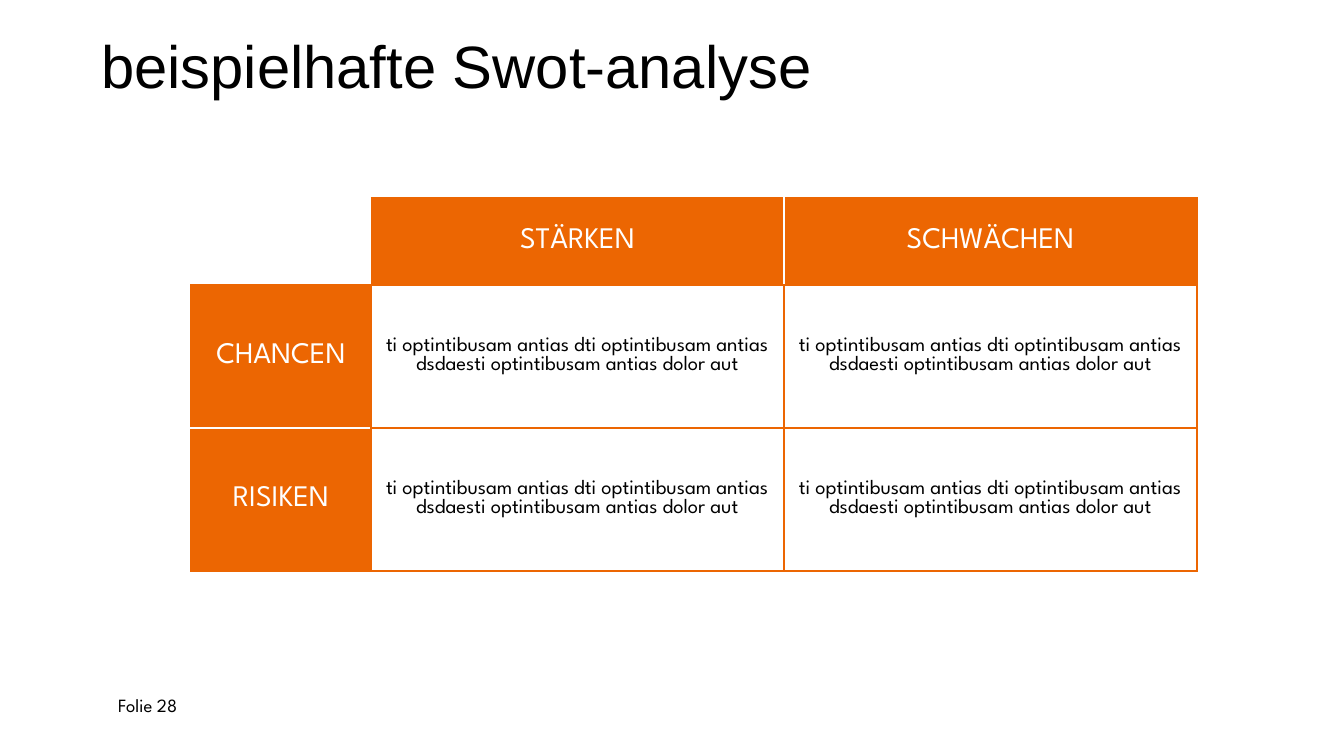
from dataclasses import dataclass
from typing import Optional

from lxml.etree import SubElement
from pptx import Presentation
from pptx.dml.color import RGBColor
from pptx.enum.text import MSO_ANCHOR as Anchor, MSO_AUTO_SIZE as AutoSize, PP_ALIGN as Align
from pptx.oxml.ns import qn
from pptx.util import Emu, Pt

EMU_PER_PX = 914400 / 134.4
SLIDE_WIDTH, SLIDE_HEIGHT = 1344, 756

ORANGE = RGBColor(0xEC, 0x66, 0x02)
WHITE = RGBColor(0xFF, 0xFF, 0xFF)
BLACK = RGBColor(0x00, 0x00, 0x00)
TITLE_FONT = "Arial"
BODY_FONT = "League Spartan"
PLAIN_TABLE_STYLE = "{2D5ABB26-0587-4C30-8999-92F81FD0307C}"

COLUMN_WIDTHS = [180, 413, 413]
ROW_HEIGHTS = [87, 143, 143]
SAMPLE = ("ti optintibusam antias dti optintibusam antias "
          "dsdaesti optintibusam antias dolor aut")
SWOT = [
    ["", "STÄRKEN", "SCHWÄCHEN"],
    ["CHANCEN", SAMPLE, SAMPLE],
    ["RISIKEN", SAMPLE, SAMPLE],
]


@dataclass(frozen=True)
class TextStyle:
    font: str
    size: int
    color: RGBColor


@dataclass(frozen=True)
class Label:
    text: str
    left: int
    top: int
    width: int
    height: int
    style: TextStyle
    inset: Optional[int] = None
    line_spacing: Optional[float] = None
    auto_size: AutoSize = AutoSize.NONE


HEADER_STYLE = TextStyle(BODY_FONT, 16, WHITE)
CONTENT_STYLE = TextStyle(BODY_FONT, 11, BLACK)
LABELS = [
    Label("beispielhafte Swot-analyse", 101, 40, 1185, 60,
          TextStyle(TITLE_FONT, 32, BLACK), inset=0, line_spacing=0.85),
    Label("Folie 28", 105, 687, 112, 36, TextStyle(BODY_FONT, 10, BLACK),
          auto_size=AutoSize.SHAPE_TO_FIT_TEXT),
]


def px(length: int) -> Emu:
    return Emu(round(length * EMU_PER_PX))


def add_run(paragraph, text: str, style: TextStyle) -> None:
    run = paragraph.add_run()
    run.text = text
    run.font.name = style.font
    run.font.size = Pt(style.size)
    run.font.color.rgb = style.color


def add_label(slide, label: Label) -> None:
    frame = slide.shapes.add_textbox(
        px(label.left), px(label.top), px(label.width), px(label.height)).text_frame
    frame.word_wrap = True
    frame.auto_size = label.auto_size
    if label.inset is not None:
        frame.margin_left = frame.margin_right = px(label.inset)
        frame.margin_top = frame.margin_bottom = px(label.inset)
    paragraph = frame.paragraphs[0]
    if label.line_spacing is not None:
        paragraph.line_spacing = label.line_spacing
    add_run(paragraph, label.text, label.style)


def is_header(row: int, column: int) -> bool:
    return (row == 0) != (column == 0)


def edge_color(row: int, column: int, side: str) -> Optional[RGBColor]:
    """White between two headers, none around the empty corner, else orange."""
    if (row, column) == (0, 0):
        return ORANGE if side == "B" else None
    if (row, column, side) == (0, 1, "L"):
        return None
    row_step, column_step = {"L": (0, -1), "R": (0, 1), "T": (-1, 0), "B": (1, 0)}[side]
    next_row, next_column = row + row_step, column + column_step
    inside = 0 <= next_row < len(ROW_HEIGHTS) and 0 <= next_column < len(COLUMN_WIDTHS)
    if inside and is_header(row, column) and is_header(next_row, next_column):
        return WHITE
    return ORANGE


def set_border(cell, side: str, color: Optional[RGBColor]) -> None:
    line = SubElement(cell._tc.get_or_add_tcPr(), qn(f"a:ln{side}"), w=str(int(Pt(1))))
    if color is None:
        SubElement(line, qn("a:noFill"))
    else:
        SubElement(SubElement(line, qn("a:solidFill")), qn("a:srgbClr"), val=str(color))
        SubElement(line, qn("a:prstDash"), val="solid")


def fill_cell(cell, row: int, column: int) -> None:
    for side in "LRTB":
        set_border(cell, side, edge_color(row, column, side))
    header = is_header(row, column)
    if header:
        cell.fill.solid()
        cell.fill.fore_color.rgb = ORANGE
    else:
        cell.fill.background()
    cell.margin_left = cell.margin_right = px(11)
    cell.margin_top = cell.margin_bottom = px(7)
    cell.vertical_anchor = Anchor.MIDDLE
    if SWOT[row][column]:
        paragraph = cell.text_frame.paragraphs[0]
        paragraph.alignment = Align.CENTER
        add_run(paragraph, SWOT[row][column], HEADER_STYLE if header else CONTENT_STYLE)


def add_swot_table(slide, left: int, top: int) -> None:
    table = slide.shapes.add_table(
        len(ROW_HEIGHTS), len(COLUMN_WIDTHS), px(left), px(top),
        px(sum(COLUMN_WIDTHS)), px(sum(ROW_HEIGHTS))).table
    table.first_row = table.horz_banding = False
    table._tbl.tblPr.find(qn("a:tableStyleId")).text = PLAIN_TABLE_STYLE
    for column, width in zip(table.columns, COLUMN_WIDTHS):
        column.width = px(width)
    for row, height in zip(table.rows, ROW_HEIGHTS):
        row.height = px(height)
    for row in range(len(ROW_HEIGHTS)):
        for column in range(len(COLUMN_WIDTHS)):
            fill_cell(table.cell(row, column), row, column)


def main() -> None:
    presentation = Presentation()
    presentation.slide_width = px(SLIDE_WIDTH)
    presentation.slide_height = px(SLIDE_HEIGHT)
    slide = presentation.slides.add_slide(presentation.slide_layouts[6])

    # Title and slide number
    for label in LABELS:
        add_label(slide, label)

    # SWOT matrix
    add_swot_table(slide, 191, 198)

    presentation.save("out.pptx")


if __name__ == "__main__":
    main()
